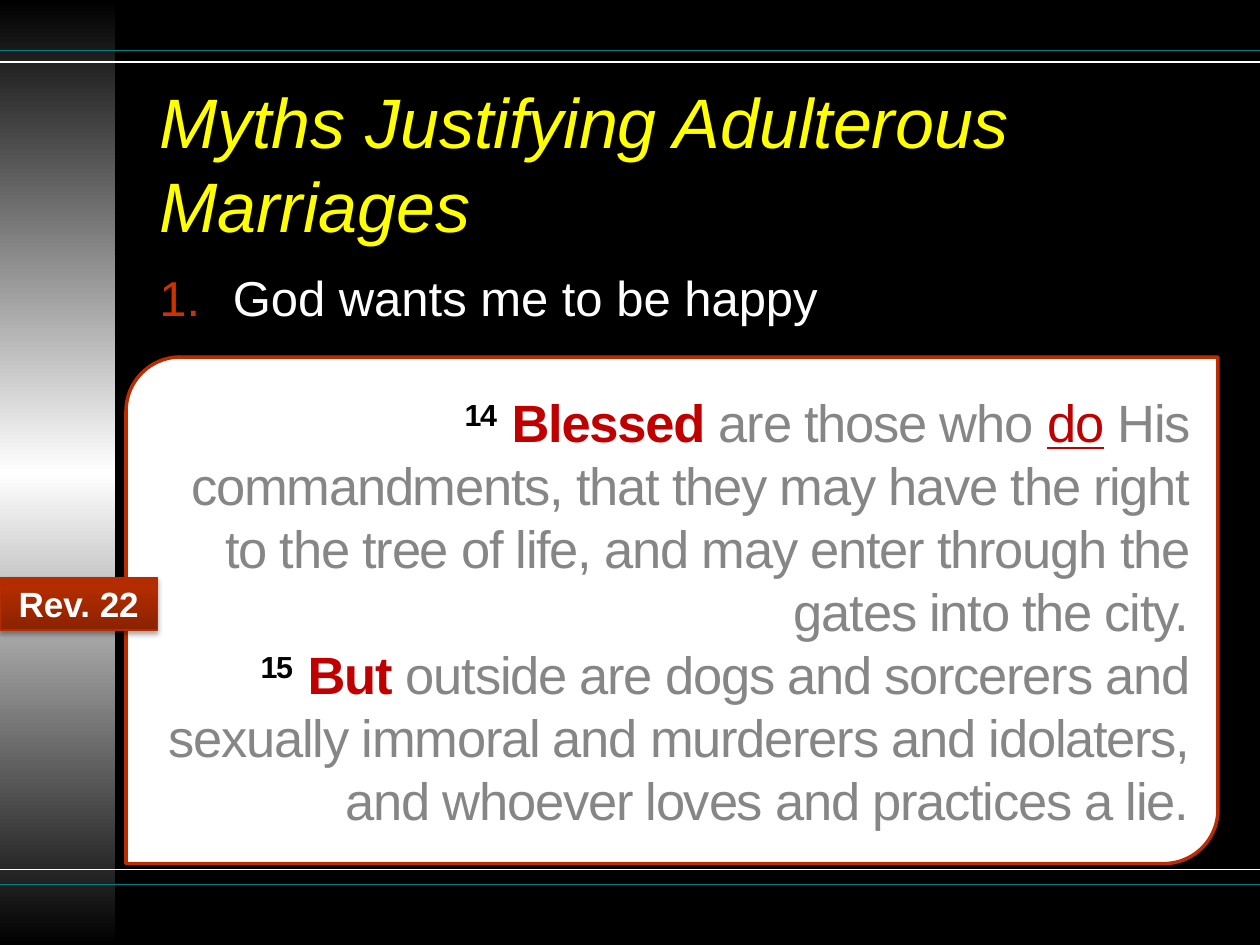
from lxml import etree
from pptx import Presentation
from pptx.dml.color import RGBColor
from pptx.enum import shapes, text
from pptx.oxml import parse_xml
from pptx.oxml.ns import nsdecls, qn
from pptx.util import Pt

BLACK = RGBColor(0x00, 0x00, 0x00)
WHITE = RGBColor(0xFF, 0xFF, 0xFF)
TEAL = RGBColor(0x00, 0x80, 0x80)
YELLOW = RGBColor(0xFF, 0xFF, 0x00)
ORANGE = RGBColor(0xCC, 0x33, 0x00)
RUST = RGBColor(0xB9, 0x2D, 0x00)
TAG_EDGE = RGBColor(0xB5, 0x2C, 0x00)
TAG_DARK = RGBColor(0x8A, 0x22, 0x00)
TAG_MID = RGBColor(0xB3, 0x2C, 0x00)
TAG_LIGHT = RGBColor(0xB4, 0x2C, 0x00)
RED = RGBColor(0xC0, 0x00, 0x00)
GREY = RGBColor(0x86, 0x86, 0x86)

VERSES = [
    [("14  ", "number"), ("Blessed ", "strong"), ("are those who ", "plain"),
     ("do", "stress"),
     (" His commandments, that they may have the right to the tree of life, "
      "and may enter through the gates into the city.", "plain")],
    [("15  ", "number"), ("But", "strong"),
     (" outside are dogs and sorcerers and sexually immoral and murderers and "
      "idolaters, and whoever loves and practices a lie.", "plain")],
]
VERSE_COLORS = {"number": BLACK, "strong": RED, "plain": GREY, "stress": RED}


def add_panel(slide, kind, box):
    panel = slide.shapes.add_shape(kind, *map(Pt, box))
    panel.shadow.inherit = False
    return panel


def set_gradient(shape, stops, angle):
    shape.fill.gradient()
    gradient = shape._element.spPr.find(qn("a:gradFill"))
    stop_list = gradient.find(qn("a:gsLst"))
    for stop in list(stop_list):
        stop_list.remove(stop)
    for position, color in stops:
        stop = etree.SubElement(stop_list, qn("a:gs"), pos=str(position * 1000))
        etree.SubElement(stop, qn("a:srgbClr"), val=str(color))
    gradient.find(qn("a:lin")).set("ang", str(angle * 60000))


def set_font(font, size, color, bold=False, italic=False):
    font.name, font.size, font.bold, font.italic = "Arial", Pt(size), bold, italic
    font.color.rgb = color


def add_text(slide, box, words, size, color, italic=False):
    frame = slide.shapes.add_textbox(*map(Pt, box)).text_frame
    frame.word_wrap = True
    line = frame.paragraphs[0]
    line.text = words
    set_font(line.font, size, color, italic=italic)
    return frame


def add_backdrop(slide, width, height):
    slide.background.fill.solid()
    slide.background.fill.fore_color.rgb = BLACK
    sidebar = add_panel(slide, shapes.MSO_SHAPE.RECTANGLE, (0, 0, 66, height))
    set_gradient(sidebar, [(0, BLACK), (50, WHITE), (100, BLACK)], 90)
    sidebar.line.fill.background()
    for y, color in [(28.8, TEAL), (35.4, WHITE), (496.8, WHITE), (505.5, TEAL)]:
        rule = slide.shapes.add_connector(
            shapes.MSO_CONNECTOR.STRAIGHT, 0, Pt(y), Pt(width), Pt(y))
        rule.line.color.rgb = color
        rule.line.width = Pt(1)
        etree.SubElement(rule._element.spPr, qn("a:effectLst"))


def add_heading(slide, left, top, width):
    title = add_text(slide, (left, top, width, 90),
                     "Myths Justifying Adulterous Marriages", 40, YELLOW, italic=True)
    title.vertical_anchor = text.MSO_ANCHOR.MIDDLE
    myths = add_text(slide, (left, top + 108, width, 324),
                     "God wants me to be happy", 28, WHITE)
    myth = myths.paragraphs[0]
    myth.line_spacing = 0.8
    myth.space_before = Pt(5.6)
    layout = myth._p.get_or_add_pPr()
    layout.set("marL", str(Pt(42)))
    layout.set("indent", str(-Pt(42)))
    bullet_color = etree.SubElement(layout, qn("a:buClr"))
    etree.SubElement(bullet_color, qn("a:srgbClr"), val=str(ORANGE))
    etree.SubElement(layout, qn("a:buFont"), typeface="Arial")
    etree.SubElement(layout, qn("a:buAutoNum"), type="arabicPeriod")


def add_passage(slide, left, top, width, height):
    passage = add_panel(slide, shapes.MSO_SHAPE.ROUND_2_DIAG_RECTANGLE,
                        (left, top, width, height))
    passage.adjustments[0] = 0.107
    passage.adjustments[1] = 0
    passage.fill.solid()
    passage.fill.fore_color.rgb = WHITE
    passage.line.color.rgb = RUST
    passage.line.width = Pt(2)
    frame = passage.text_frame
    frame.word_wrap = True
    frame.vertical_anchor = text.MSO_ANCHOR.MIDDLE
    for index, verse in enumerate(VERSES):
        line = frame.add_paragraph() if index else frame.paragraphs[0]
        line.alignment = text.PP_ALIGN.RIGHT
        for words, role in verse:
            run = line.add_run()
            run.text = words
            set_font(run.font, 30, VERSE_COLORS[role], bold=role in ("number", "strong"))
            run.font.underline = role == "stress"
            properties = run._r.get_or_add_rPr()
            properties.set("spc", "-70")
            if role == "number":
                properties.set("baseline", "30000")


def add_reference(slide, left, top, width, height):
    tag = add_panel(slide, shapes.MSO_SHAPE.RECTANGLE, (left, top, width, height))
    set_gradient(tag, [(0, TAG_DARK), (80, TAG_MID), (100, TAG_LIGHT)], 270)
    tag.line.color.rgb = TAG_EDGE
    tag.line.width = Pt(0.75)
    tag._element.spPr.find(qn("a:effectLst")).append(parse_xml(
        f'<a:outerShdw {nsdecls("a")} blurRad="{Pt(3.1)}" dist="{Pt(1.8)}" '
        f'dir="5400000" rotWithShape="0"><a:srgbClr val="{BLACK}">'
        '<a:alpha val="35000"/></a:srgbClr></a:outerShdw>'))
    frame = tag.text_frame
    frame.vertical_anchor = text.MSO_ANCHOR.MIDDLE
    label = frame.paragraphs[0]
    label.text = "Rev. 22"
    label.alignment = text.PP_ALIGN.CENTER
    set_font(label.font, 20, WHITE, bold=True)


def main():
    deck = Presentation()
    deck.slide_width, deck.slide_height = Pt(720), Pt(540)
    slide = deck.slides.add_slide(deck.slide_layouts[6])
    add_backdrop(slide, 720, 540)
    add_heading(slide, 84, 48, 612)
    add_passage(slide, 72, 204, 624, 289.5)
    add_reference(slide, 0, 330, 90, 30)
    deck.save("out.pptx")


if __name__ == "__main__":
    main()
